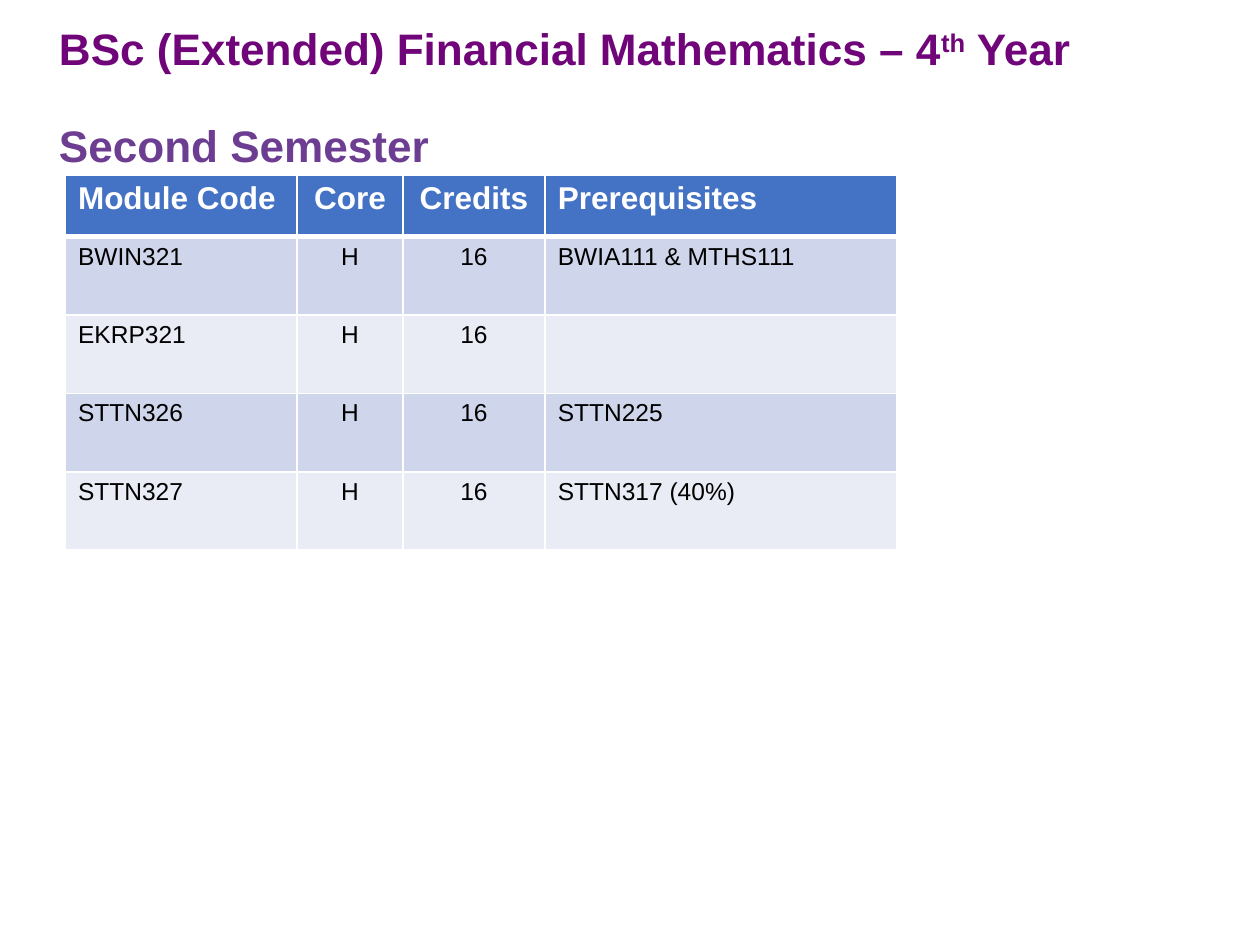
from dataclasses import dataclass

from lxml import etree
from pptx import Presentation
from pptx import util as u
from pptx.dml.color import RGBColor
from pptx.enum import text
from pptx.oxml.ns import qn


@dataclass(frozen=True)
class Theme:
    font: str = "Arial"
    title: str = "6F0579"
    subtitle: str = "6C3D91"
    header: str = "4472C4"
    bands: tuple = ("CFD5EA", "E9EBF5")
    white: str = "FFFFFF"
    black: str = "000000"
    title_size: float = 25.2
    header_size: float = 18
    body_size: float = 14


theme = Theme()


def style(font, size, color, bold):
    font.name, font.size, font.bold = theme.font, u.Pt(size), bold
    font.color.rgb = RGBColor.from_string(color)


def set_borders(cell, bottom_width):
    """Draw white cell borders; the lines must precede the fill in the XML."""
    properties = cell._tc.get_or_add_tcPr()
    widths = {"a:lnL": 1, "a:lnR": 1, "a:lnT": 1, "a:lnB": bottom_width}
    for position, (tag, width) in enumerate(widths.items()):
        line = etree.Element(qn(tag), w=str(u.Pt(width)))
        fill = etree.SubElement(line, qn("a:solidFill"))
        etree.SubElement(fill, qn("a:srgbClr"), val=theme.white)
        properties.insert(position, line)


deck = Presentation()
deck.slide_width, deck.slide_height = u.Cm(25.4), u.Cm(19.05)
page = deck.slides.add_slide(deck.slide_layouts[6])

# Heading
box = page.shapes.add_textbox(u.Cm(0.94), u.Cm(0.43), u.Cm(23.5), u.Cm(1.4))
box.text_frame.word_wrap = True
title = box.text_frame.paragraphs[0]
for part in ("BSc (Extended) Financial Mathematics – 4", "th", " Year"):
    span = title.add_run()
    span.text = part
    style(span.font, theme.title_size, theme.title, True)
title.runs[1].font._element.set("baseline", "30000")

subtitle = box.text_frame.add_paragraph()
subtitle.text = "Second Semester"
subtitle.space_before = u.Pt(28)
style(subtitle.runs[0].font, theme.title_size, theme.subtitle, True)
for para in box.text_frame.paragraphs:
    para.line_spacing = 0.9

# Module table
rows = [
    ("Module Code", "Core", "Credits", "Prerequisites"),
    ("BWIN321", "H", "16", "BWIA111 & MTHS111"),
    ("EKRP321", "H", "16", ""),
    ("STTN326", "H", "16", "STTN225"),
    ("STTN327", "H", "16", "STTN317 (40%)"),
]
column_widths = (4.67, 2.13, 2.87, 7.09)
header_height, row_height = 1.24, 1.58
centred_columns = (1, 2)

modules = page.shapes.add_table(
    len(rows), len(column_widths), u.Cm(1.32), u.Cm(3.53),
    u.Cm(sum(column_widths)), u.Cm(header_height + row_height * (len(rows) - 1)),
).table
for column, width in zip(modules.columns, column_widths):
    column.width = u.Cm(width)

for r, values in enumerate(rows):
    is_header = r == 0
    modules.rows[r].height = u.Cm(header_height if is_header else row_height)
    fill_color = theme.header if is_header else theme.bands[(r - 1) % 2]
    for c, value in enumerate(values):
        cell = modules.cell(r, c)
        cell.fill.solid()
        cell.fill.fore_color.rgb = RGBColor.from_string(fill_color)
        set_borders(cell, 3 if is_header else 1)
        para = cell.text_frame.paragraphs[0]
        para.text = value
        if c in centred_columns:
            para.alignment = text.PP_ALIGN.CENTER
        for span in para.runs:
            if is_header:
                style(span.font, theme.header_size, theme.white, True)
            else:
                style(span.font, theme.body_size, theme.black, False)

deck.save("out.pptx")
